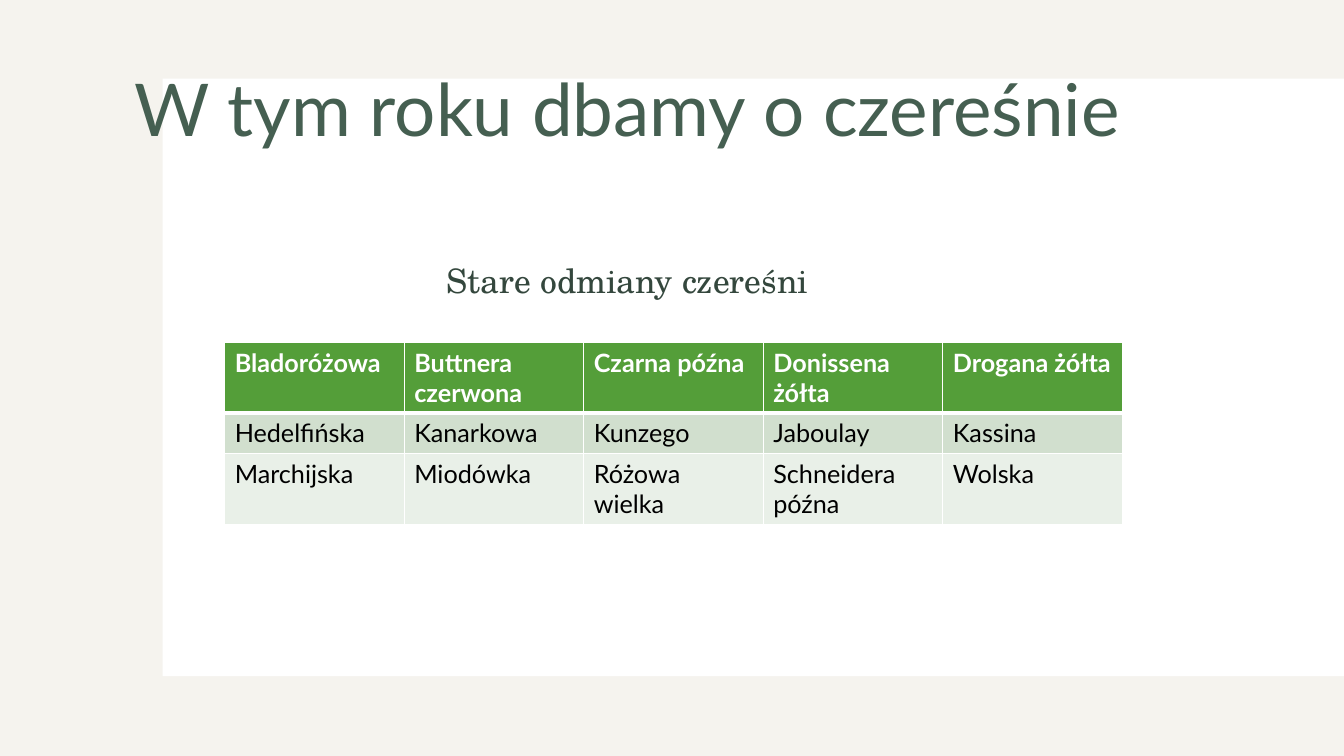
from typing import NamedTuple

from lxml.etree import SubElement
from pptx import Presentation
from pptx.dml.color import RGBColor as Rgb
from pptx.enum.shapes import MSO_SHAPE as Kind
from pptx.enum.text import MSO_ANCHOR as Anchor, MSO_AUTO_SIZE as Fit, PP_ALIGN as Align
from pptx.oxml.ns import qn
from pptx.util import Emu, Pt

WHITE = "FFFFFF"
SANS = "Lato"


class Box(NamedTuple):
    left: int
    top: int
    width: int
    height: int


class Style(NamedTuple):
    face: str
    size: int
    color: str
    bold: bool = False


class Band(NamedTuple):
    names: list[str]
    fill: str
    style: Style
    lines: dict[str, int]


def px(count: int) -> Emu:
    return Emu(count * 9525)


def paint(fill, color: str) -> None:
    fill.solid()
    fill.fore_color.rgb = Rgb.from_string(color)


def write(frame, text: str, style: Style) -> None:
    frame.text = text
    font = frame.paragraphs[0].runs[0].font
    font.name = style.face
    font.size = Pt(style.size)
    font.bold = style.bold
    font.color.rgb = Rgb.from_string(style.color)


def place(shape, box: Box) -> None:
    shape.left, shape.top, shape.width, shape.height = map(px, box)


def head(shape, box: Box, text: str, style: Style) -> None:
    place(shape, box)
    frame = shape.text_frame
    write(frame, text, style)
    frame.word_wrap = True
    frame.auto_size = Fit.NONE
    frame.vertical_anchor = Anchor.MIDDLE
    frame.paragraphs[0].alignment = Align.CENTER


def edge(cell, lines: dict[str, int]) -> None:
    props = cell._tc.get_or_add_tcPr()
    for side, width in lines.items():
        line = SubElement(props, qn(f"a:ln{side}"), w=str(Pt(width)))
        fill = SubElement(line, qn("a:solidFill"))
        SubElement(fill, qn("a:srgbClr"), val=WHITE)


def grid(slide, left: int, top: int, wide: int, high: int, bands: list[Band]) -> None:
    count = len(bands[0].names)
    table = slide.shapes.add_table(
        len(bands), count, px(left), px(top), px(wide * count), px(high * len(bands))
    ).table
    for column in table.columns:
        column.width = px(wide)
    for row, band in zip(table.rows, bands):
        row.height = px(high)
        for cell, name in zip(row.cells, band.names):
            edge(cell, band.lines)
            paint(cell.fill, band.fill)
            write(cell.text_frame, name, band.style)


def main() -> None:
    deck = Presentation()
    deck.slide_width, deck.slide_height = px(1280), px(720)
    slide = deck.slides.add_slide(deck.slide_layouts[5])
    paint(slide.background.fill, "F5F3EE")

    panel = slide.shapes.add_shape(Kind.RECTANGLE, *map(px, Box(155, 75, 1125, 569)))
    panel.shadow.inherit = False
    paint(panel.fill, WHITE)
    panel.line.fill.background()
    title = slide.shapes.title
    panel._element.addnext(title._element)

    head(title, Box(44, 38, 1107, 139), "W tym roku dbamy o czereśnie",
         Style(SANS, 52, "455F51"))
    title.text_frame.paragraphs[0].line_spacing = 0.9
    label = slide.shapes.add_textbox(*map(px, Box(44, 243, 1107, 48)))
    head(label, Box(44, 243, 1107, 48), "Stare odmiany czereśni",
         Style("TeX Gyre Schola", 24, "34473D"))

    plain = Style(SANS, 18, "000000")
    thin = {"L": 1, "R": 1, "T": 1, "B": 1}
    grid(slide, 214, 326, 171, 39, [
        Band(["Bladoróżowa", "Buttnera czerwona", "Czarna późna",
              "Donissena żółta", "Drogana żółta"],
             "549E39", Style(SANS, 18, WHITE, True), thin | {"B": 3}),
        Band(["Hedelfińska", "Kanarkowa", "Kunzego", "Jaboulay", "Kassina"],
             "D1DFCE", plain, thin | {"T": 3}),
        Band(["Marchijska", "Miodówka", "Różowa wielka", "Schneidera późna", "Wolska"],
             "E9F0E8", plain, thin),
    ])
    deck.save("out.pptx")


if __name__ == "__main__":
    main()
